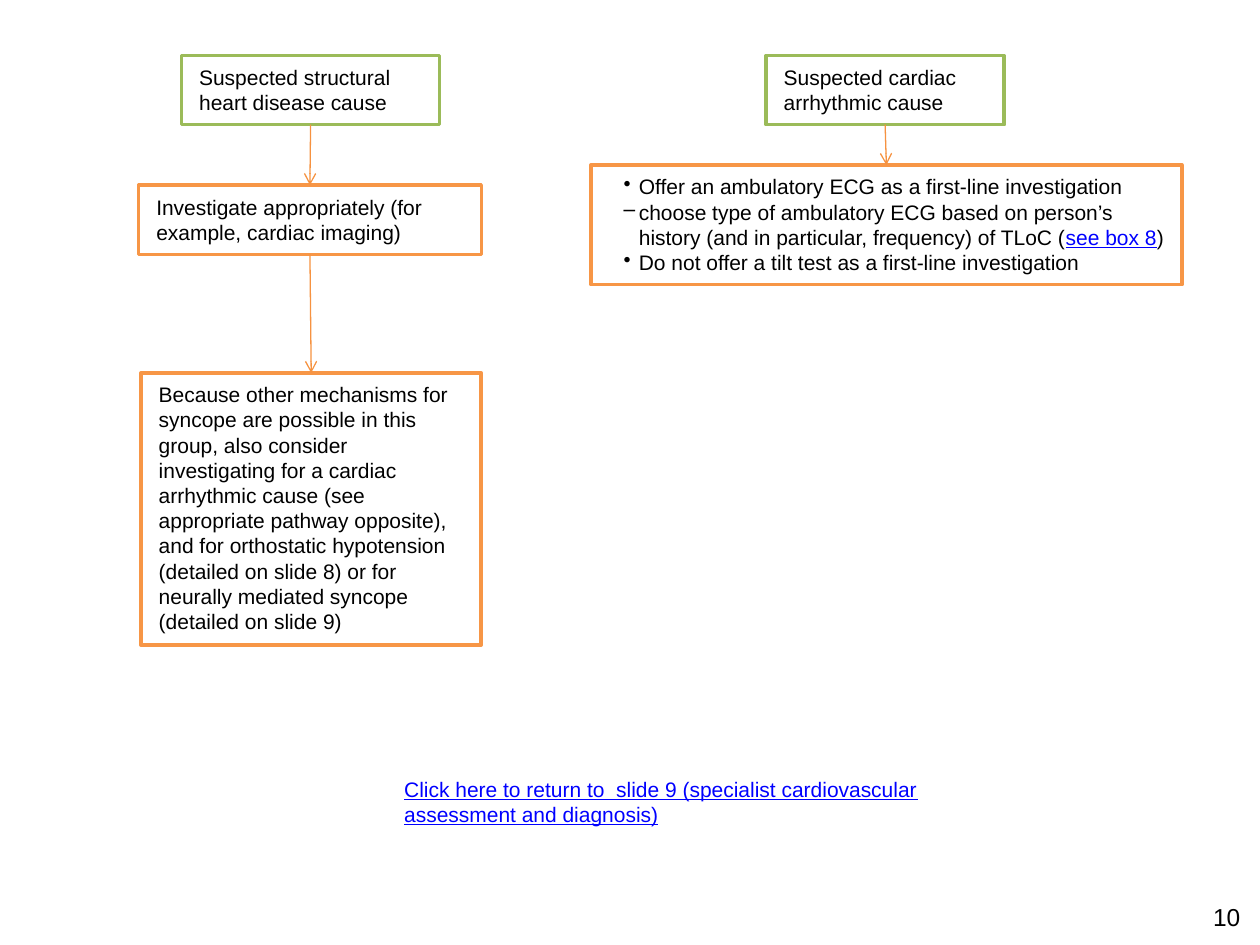
from pptx import Presentation
from pptx.dml.color import RGBColor
from pptx.enum.shapes import MSO_CONNECTOR, MSO_SHAPE
from pptx.enum.text import MSO_ANCHOR, PP_ALIGN
from pptx.oxml.ns import qn
from pptx.util import Inches, Pt
from lxml import etree

RECTANGLE = MSO_SHAPE.RECTANGLE
STRAIGHT = MSO_CONNECTOR.STRAIGHT
TOP, LEFT = MSO_ANCHOR.TOP, PP_ALIGN.LEFT
BLACK = RGBColor(0x00, 0x00, 0x00)
WHITE = RGBColor(0xFF, 0xFF, 0xFF)
BLUE = RGBColor(0x00, 0x00, 0xFF)
GREEN = RGBColor(0x9B, 0xBB, 0x59)
ORANGE = RGBColor(0xF7, 0x96, 0x46)
ARROW_ORANGE = RGBColor(0xF6, 0x92, 0x40)
TOP_SIDE, BOTTOM_SIDE = 0, 2
FONT = "Arial"

# Flowchart boxes: name -> (left, top, width, height), border, paragraphs.
# A paragraph is (bullet, [(text, is_link), ...]).
BOXES = {
    "structural cause": ((1.44, 0.44, 2.05, 0.55), GREEN, [
        (None, [("Suspected structural heart disease cause", False)])]),
    "imaging": ((1.1, 1.47, 2.72, 0.55), ORANGE, [
        (None, [("Investigate appropriately (for example, cardiac imaging)", False)])]),
    "other mechanisms": ((1.12, 2.96, 2.7, 2.16), ORANGE, [
        (None, [("Because other mechanisms for syncope are possible in this group, "
                 "also consider investigating for a cardiac arrhythmic cause (see "
                 "appropriate pathway opposite), and for orthostatic hypotension "
                 "(detailed on slide 8) or for neurally mediated syncope "
                 "(detailed on slide 9)", False)])]),
    "arrhythmic cause": ((6.08, 0.44, 1.89, 0.55), GREEN, [
        (None, [("Suspected cardiac arrhythmic cause", False)])]),
    "ambulatory ECG": ((4.69, 1.31, 4.69, 0.95), ORANGE, [
        ("•", [("Offer an ambulatory ECG as a first-line investigation", False)]),
        ("–", [("choose type of ambulatory ECG based on person’s history "
                "(and in particular, frequency) of TLoC (", False),
               ("see box 8", True), (")", False)]),
        ("•", [("Do not offer a tilt test as a first-line investigation", False)])]),
}
ARROWS = [
    ("structural cause", "imaging"),
    ("imaging", "other mechanisms"),
    ("arrhythmic cause", "ambulatory ECG"),
]
# Loose text: position, size, paragraphs
LABELS = [
    ((3.11, 6.11, 4.57, 0.51), 12, [
        (None, [("Click here to return to  slide 9 (specialist cardiovascular "
                 "assessment and diagnosis)", True)])]),
    ((9.53, 7.11, 0.43, 0.34), 14, [(None, [("10", False)])]),
]


def add_bullet(para, symbol):
    properties = para._p.get_or_add_pPr()
    properties.set("marL", str(Inches(0.24)))
    properties.set("indent", str(-Inches(0.12)))
    bullet = etree.SubElement(properties, qn("a:buChar"))
    bullet.set("char", symbol)


def write(frame, paragraphs, size=12):
    frame.word_wrap = True
    frame.vertical_anchor = TOP
    for index, (symbol, spans) in enumerate(paragraphs):
        para = frame.add_paragraph() if index else frame.paragraphs[0]
        para.alignment = LEFT
        if symbol:
            add_bullet(para, symbol)
        para.font.name, para.font.size = FONT, Pt(size)
        for text, is_link in spans:
            span = para.add_run()
            span.text = text
            span.font.color.rgb = BLUE if is_link else BLACK
            if is_link:
                span.font.underline = True


def add_box(page, place, border, paragraphs):
    box = page.shapes.add_shape(RECTANGLE, *map(Inches, place))
    box.shadow.inherit = False
    box.fill.solid()
    box.fill.fore_color.rgb = WHITE
    box.line.color.rgb = border
    box.line.width = Pt(2)
    frame = box.text_frame
    frame.margin_left = frame.margin_right = Inches(0.14)
    frame.margin_top = frame.margin_bottom = Inches(0.07)
    write(frame, paragraphs)
    return box


def add_arrow(page, start, end):
    arrow = page.shapes.add_connector(STRAIGHT, 0, 0, 0, 0)
    arrow.begin_connect(start, BOTTOM_SIDE)
    arrow.end_connect(end, TOP_SIDE)
    arrow.line.color.rgb = ARROW_ORANGE
    arrow.line.width = Pt(0.75)
    head = etree.SubElement(arrow.line._get_or_add_ln(), qn("a:tailEnd"))
    head.set("type", "arrow")
    etree.SubElement(arrow._element.spPr, qn("a:effectLst"))


def main():
    deck = Presentation()
    deck.slide_width, deck.slide_height = Inches(10), Inches(7.5)
    page = deck.slides.add_slide(deck.slide_layouts[6])

    # Both pathways
    boxes = {name: add_box(page, *parts) for name, parts in BOXES.items()}
    for start, end in ARROWS:
        add_arrow(page, boxes[start], boxes[end])

    # Return line and page number
    for place, size, paragraphs in LABELS:
        label = page.shapes.add_textbox(*map(Inches, place))
        write(label.text_frame, paragraphs, size)

    deck.save("out.pptx")


if __name__ == "__main__":
    main()
